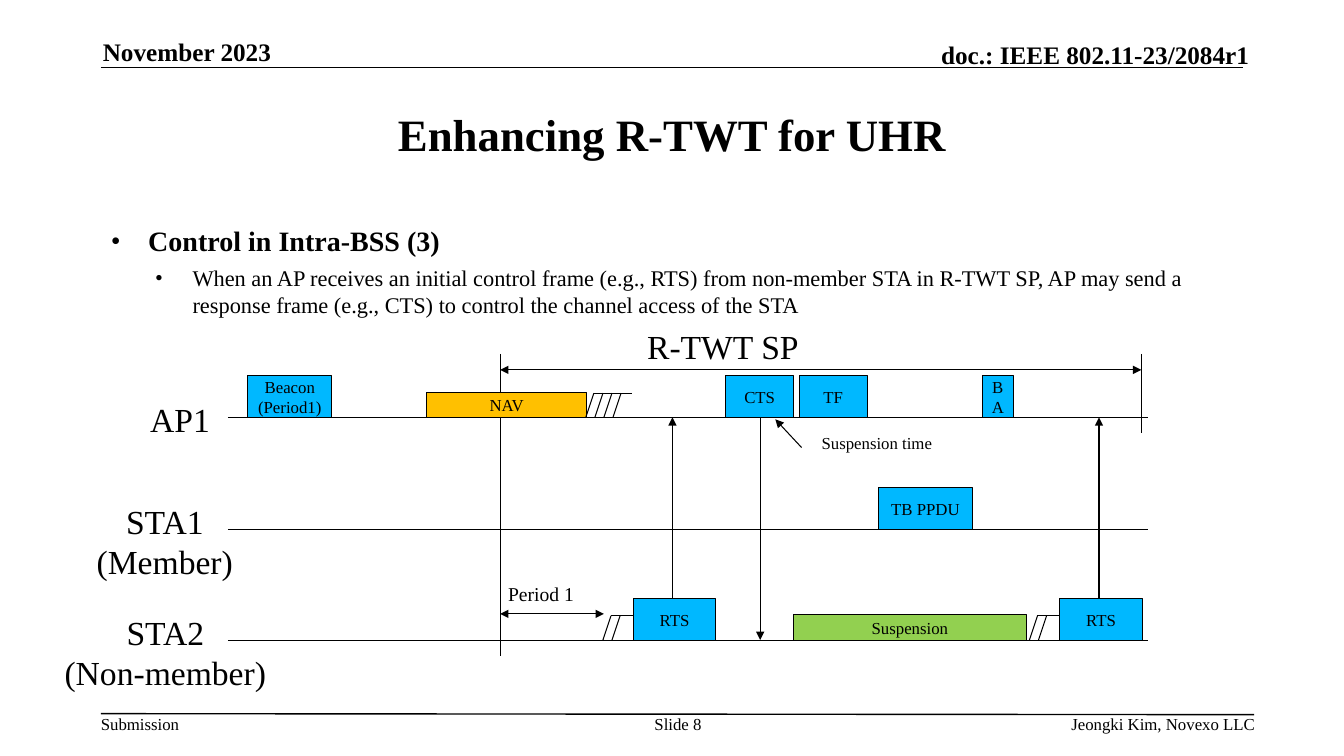
from lxml import etree
from pptx import Presentation
from pptx.dml.color import RGBColor
from pptx.enum.shapes import MSO_CONNECTOR, MSO_SHAPE
from pptx.enum.text import MSO_ANCHOR, MSO_AUTO_SIZE, PP_ALIGN
from pptx.oxml.ns import qn
from pptx.util import Emu, Pt

SCALE = 9144
FONT = "Times New Roman"
BLACK = RGBColor(0x00, 0x00, 0x00)
BLUE = RGBColor(0x00, 0xB8, 0xFF)
AMBER = RGBColor(0xFF, 0xC0, 0x00)
GREEN = RGBColor(0x92, 0xD0, 0x50)
LEFT, CENTER, RIGHT = PP_ALIGN.LEFT, PP_ALIGN.CENTER, PP_ALIGN.RIGHT
TOP, MIDDLE, BOTTOM = MSO_ANCHOR.TOP, MSO_ANCHOR.MIDDLE, MSO_ANCHOR.BOTTOM
NO_AUTOFIT = MSO_AUTO_SIZE.NONE
STRAIGHT = MSO_CONNECTOR.STRAIGHT
RECTANGLE = MSO_SHAPE.RECTANGLE


def px(length):
    """Turn px, 100 to the inch, into EMU."""
    return Emu(length * SCALE)


def move(shape, box):
    """Put a shape into a box of left, top, width and height."""
    shape.left, shape.top, shape.width, shape.height = map(px, box)


def style(paragraph, size, bold=False, align=LEFT):
    """Format a paragraph and its runs."""
    paragraph.alignment = align
    for run in paragraph.runs:
        run.font.name = FONT
        run.font.size = Pt(size)
        run.font.bold = bold
        run.font.color.rgb = BLACK


def write(frame, text, size, bold=False, align=LEFT, anchor=TOP, wrap=True):
    """Fill a text frame with evenly formatted text."""
    frame.text = text
    frame.word_wrap = wrap
    frame.auto_size = NO_AUTOFIT
    frame.vertical_anchor = anchor
    for paragraph in frame.paragraphs:
        style(paragraph, size, bold, align)


def add_label(slide, box, text, size, inset=True, **options):
    """Add a text box, with or without inner margins."""
    frame = slide.shapes.add_textbox(*map(px, box)).text_frame
    if not inset:
        frame.margin_left = frame.margin_right = 0
        frame.margin_top = frame.margin_bottom = 0
    write(frame, text, size, **options)


def add_line(slide, start, end, weight=0.75, arrows=()):
    """Draw a black line with arrowheads at the named ends."""
    line = slide.shapes.add_connector(STRAIGHT, *map(px, (*start, *end)))
    line.line.color.rgb = BLACK
    line.line.width = Pt(weight)
    outline = line.line._get_or_add_ln()
    for arrow in arrows:
        etree.SubElement(outline, qn(f"a:{arrow}"), type="triangle")
    etree.SubElement(line._element.spPr, qn("a:effectLst"))


def add_frame(slide, box, text, fill):
    """Draw a transmitted frame or a blocked interval."""
    block = slide.shapes.add_shape(RECTANGLE, *map(px, box))
    block.shadow.inherit = False
    block.fill.solid()
    block.fill.fore_color.rgb = fill
    block.line.color.rgb = BLACK
    block.line.width = Pt(0.75)
    write(block.text_frame, text, 12, align=CENTER, anchor=MIDDLE)


def add_backoff(slide, left, baseline, slots, end):
    """Draw slanted backoff slots under a cap that runs to the end."""
    top, lean, pitch = baseline - 24, 8, 9
    for slot in range(slots):
        foot = left + slot * pitch
        add_line(slide, (foot, baseline), (foot + lean, top))
    add_line(slide, (left + lean, top), (end, top))


def add_header(slide, box):
    """Place the date, the document number and the rule below them."""
    left, top, width, height = box
    add_line(slide, (left, top + 31), (left + 1133, top + 31), 1)
    add_label(slide, (left + 2, top, 273, height), "November 2023", 18,
              inset=False, bold=True, anchor=BOTTOM)
    add_label(slide, (left + width - 515, top + 3, 510, height),
              "doc.: IEEE 802.11-23/2084r1", 18,
              inset=False, bold=True, align=RIGHT, anchor=BOTTOM)


def add_footer(slide, box):
    """Place the rule, the note, the slide number and the author."""
    left, top, width, height = box
    add_line(slide, (left, top), (left + width, top + 1), 1)
    parts = ((left, 79, "Submission", LEFT),
             (left + 534, 77, "Slide 8", CENTER),
             (left + width - 463, 464, "Jeongki Kim, Novexo LLC", RIGHT))
    for part_left, part_width, text, align in parts:
        add_label(slide, (part_left, top, part_width, height), text, 12,
                  inset=False, align=align)


def add_title(slide, box):
    """Fill the title placeholder."""
    title = slide.shapes.title
    move(title, box)
    write(title.text_frame, "Enhancing R-TWT for UHR", 32,
          bold=True, align=CENTER, anchor=MIDDLE)


def add_points(slide, box):
    """Fill the body placeholder with two levels of bullets."""
    body = slide.placeholders[1]
    move(body, box)
    points = (
        ("Control in Intra-BSS (3)", 20, True, 37, 6),
        ("When an AP receives an initial control frame (e.g., RTS) from "
         "non-member STA in R-TWT SP, AP may send a response frame "
         "(e.g., CTS) to control the channel access of the STA",
         16, False, 81, 5),
    )
    write(body.text_frame, "\n".join(point[0] for point in points), 16)
    for level, paragraph in enumerate(body.text_frame.paragraphs):
        _, size, bold, indent, gap = points[level]
        paragraph.level = level
        style(paragraph, size, bold)
        paragraph.space_before = Pt(gap)
        properties = paragraph._p.get_or_add_pPr()
        properties.set("marL", str(px(indent)))
        properties.set("indent", str(px(-37)))
        color = etree.SubElement(properties, qn("a:buClr"))
        etree.SubElement(color, qn("a:srgbClr"), val=str(BLACK))
        etree.SubElement(properties, qn("a:buFont"), typeface=FONT)
        etree.SubElement(properties, qn("a:buChar"), char="•")


def add_timeline(slide, box):
    """Draw the frame exchange between the AP and both stations."""
    left, top, width, height = box

    def at(x, y):
        return left + x, top + y

    ap, member, other = baselines = (96, 207, 317)
    sp_start, sp_end = 442, 1078
    for baseline in baselines:
        add_line(slide, at(172, baseline), at(width, baseline))
    add_line(slide, at(sp_start, 33), at(sp_start, height))
    add_line(slide, at(sp_end, 33), at(sp_end, 112))

    frames = (
        (192, ap, 83, 41, "Beacon\n(Period1)", BLUE),
        (369, ap, 159, 25, "NAV", AMBER),
        (666, ap, 67, 41, "CTS", BLUE),
        (739, ap, 67, 41, "TF", BLUE),
        (920, ap, 31, 41, "BA", BLUE),
        (817, member, 94, 41, "TB PPDU", BLUE),
        (574, other, 82, 41, "RTS", BLUE),
        (733, other, 231, 25, "Suspension", GREEN),
        (997, other, 82, 41, "RTS", BLUE),
    )
    for x, baseline, span, tall, text, fill in frames:
        add_frame(slide, (*at(x, baseline - tall), span, tall), text, fill)

    for x, baseline, slots, end in ((527, ap, 4, 573), (544, other, 2, 574),
                                    (967, other, 2, 997)):
        add_backoff(slide, left + x, top + baseline, slots, left + end)

    for y, end in ((49, sp_end), (291, 545)):
        add_line(slide, at(sp_start, y), at(end, y),
                 arrows=("headEnd", "tailEnd"))
    for start, end in (((613, other - 41), (613, ap)),
                       ((700, ap), (700, other)),
                       ((1036, other - 41), (1036, ap)),
                       ((741, 126), (715, 98))):
        add_line(slide, at(*start), at(*end), arrows=("tailEnd",))

    labels = (
        (578, 0, 172, 50, "R-TWT SP", 24, LEFT, False),
        (85, 73, 80, 50, "AP1", 24, LEFT, False),
        (28, 174, 163, 91, "STA1\n(Member)", 24, CENTER, True),
        (0, 284, 220, 91, "STA2\n(Non-member)", 24, CENTER, True),
        (440, 254, 112, 34, "Period 1", 14, LEFT, True),
        (751, 106, 218, 30, "Suspension time", 12, LEFT, True),
    )
    for x, y, span, tall, text, size, align, wrap in labels:
        add_label(slide, (*at(x, y), span, tall), text, size,
                  align=align, wrap=wrap)


def main():
    """Build the slide and save it."""
    deck = Presentation()
    deck.slide_width, deck.slide_height = px(1333), px(750)
    slide = deck.slides.add_slide(deck.slide_layouts[1])
    add_header(slide, (100, 36, 1144, 30))
    add_title(slide, (100, 75, 1133, 116))
    add_points(slide, (100, 217, 1133, 450))
    add_timeline(slide, (54, 318, 1085, 333))
    add_footer(slide, (100, 708, 1144, 20))
    deck.save("out.pptx")


if __name__ == "__main__":
    main()
